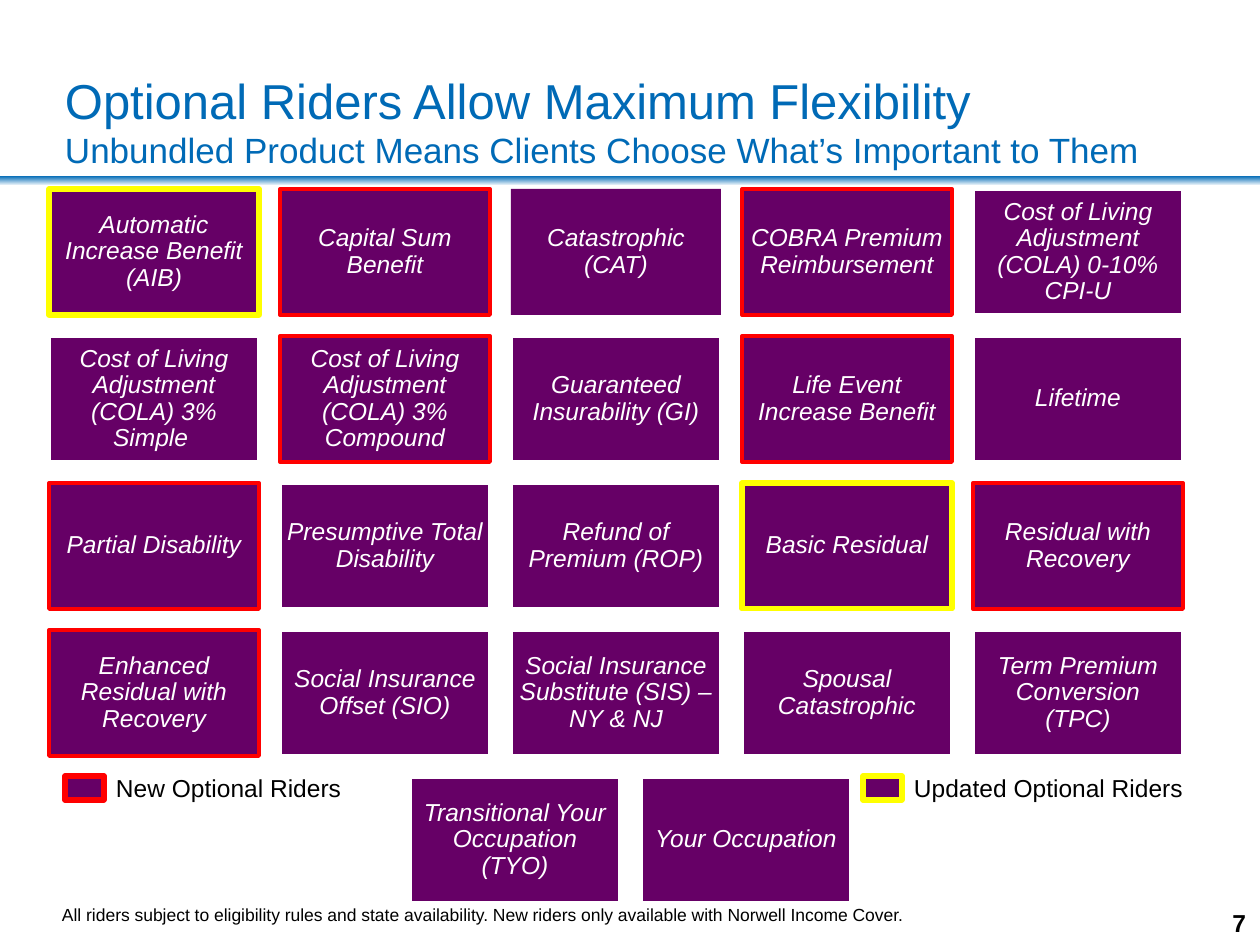
"""Build the optional riders slide: a tile grid with a two-colour legend."""
import pptx
import pptx.dml.color
import pptx.enum.shapes
import pptx.enum.text
import pptx.util

PX = 914400 // 126
BLUE, PURPLE, WHITE, BLACK = "006AB6", "660066", "FFFFFF", "000000"
RED, YELLOW = "FF0000", "FFFF00"
PLAIN, NEW, UPDATED, BARE = (WHITE, 2), (RED, 2.25), (YELLOW, 3), None

TITLE = ("Optional Riders Allow Maximum Flexibility", 28)
SUBTITLE = ("Unbundled Product Means Clients Choose What’s Important to Them", 20)
RIDER_ROWS = [
    (49, [("Automatic Increase Benefit (AIB)", UPDATED),
          ("Capital Sum Benefit", NEW),
          ("Catastrophic (CAT)", BARE),
          ("COBRA Premium Reimbursement", NEW),
          ("Cost of Living Adjustment (COLA) 0-10% CPI-U", PLAIN)]),
    (49, [("Cost of Living Adjustment (COLA) 3% Simple ", PLAIN),
          ("Cost of Living Adjustment (COLA) 3% Compound", NEW),
          ("Guaranteed Insurability (GI)", PLAIN),
          ("Life Event Increase Benefit", NEW),
          ("Lifetime", PLAIN)]),
    (49, [("Partial Disability", NEW),
          ("Presumptive Total Disability", PLAIN),
          ("Refund of Premium (ROP)", PLAIN),
          ("Basic Residual", UPDATED),
          ("Residual with Recovery", NEW)]),
    (49, [("Enhanced Residual with Recovery", NEW),
          ("Social Insurance Offset (SIO)", PLAIN),
          ("Social Insurance Substitute (SIS) – NY & NJ", PLAIN),
          ("Spousal Catastrophic", PLAIN),
          ("Term Premium Conversion (TPC)", PLAIN)]),
    (410, [("Transitional Your Occupation (TYO)", PLAIN),
           ("Your Occupation", PLAIN)]),
]
LEGEND = [(65, 346, "New Optional Riders", RED),
          (863, 325, "Updated Optional Riders", YELLOW)]
FOOTNOTE = ("All riders subject to eligibility rules and state availability. "
            "New riders only available with Norwell Income Cover.")
PAGE_NUMBER = "7"
GRID_TOP, TILE_WIDTH, TILE_HEIGHT, GAP = 189, 210, 126, 21


def color(value):
    return pptx.dml.color.RGBColor.from_string(value)


def px(*lengths):
    return [length * PX for length in lengths]


def write(box, *spans, ink=BLACK, bold=False, italic=False, align="LEFT",
          anchor="TOP", inset=(13, 6), wrap=True, spacing=None):
    """Fill a box with (text, size) spans, one line each, in one paragraph."""
    frame = box.text_frame
    frame.word_wrap = wrap
    frame.vertical_anchor = getattr(pptx.enum.text.MSO_ANCHOR, anchor)
    frame.margin_left = frame.margin_right = inset[0] * PX
    frame.margin_top = frame.margin_bottom = inset[1] * PX
    para = frame.paragraphs[0]
    para.alignment = getattr(pptx.enum.text.PP_ALIGN, align)
    if spacing:
        para.line_spacing = spacing
    for index, (text, size) in enumerate(spans):
        if index:
            para.add_line_break()
        span = para.add_run()
        span.text = text
        span.font.name = "Arial"
        span.font.size = pptx.util.Pt(size)
        span.font.bold, span.font.italic = bold, italic
        span.font.color.rgb = color(ink)


def add_text(page, place, *spans, **style):
    write(page.shapes.add_textbox(*px(*place)), *spans, **style)


def add_rectangle(page, place, fill=PURPLE, outline=None):
    kind = pptx.enum.shapes.MSO_SHAPE.RECTANGLE
    box = page.shapes.add_shape(kind, *px(*place))
    box.shadow.inherit = False
    box.fill.solid()
    box.fill.fore_color.rgb = color(fill)
    if outline:
        box.line.color.rgb = color(outline[0])
        box.line.width = pptx.util.Pt(outline[1])
    else:
        box.line.fill.background()
    return box


def add_header(page):
    band = add_rectangle(page, (0, 176, 1260, 9))
    band.fill.gradient()
    band.fill.gradient_angle = 270
    for stop, shade in zip(band.fill.gradient_stops, (BLUE, "E7F1F8")):
        stop.color.rgb = color(shade)
    add_text(page, (65, 63, 1121, 115), TITLE, SUBTITLE, ink=BLUE,
             anchor="MIDDLE", inset=(0, 0), wrap=False)


def add_riders(page):
    for row, (left, riders) in enumerate(RIDER_ROWS):
        top = GRID_TOP + row * (TILE_HEIGHT + GAP)
        for column, (name, outline) in enumerate(riders):
            place = (left + column * (TILE_WIDTH + GAP), top, TILE_WIDTH, TILE_HEIGHT)
            tile = add_rectangle(page, place, outline=outline)
            write(tile, (name, 14), ink=WHITE, italic=True, align="CENTER",
                  anchor="MIDDLE", inset=(7, 7), spacing=0.9)


def add_legend(page):
    for left, width, label, outline in LEGEND:
        add_text(page, (left + 38, 767, width, 43), (label, 14))
        add_rectangle(page, (left, 776, 39, 24), outline=(outline, 3))


def main():
    deck = pptx.Presentation()
    deck.slide_width, deck.slide_height = px(1260, 945)
    page = deck.slides.add_slide(deck.slide_layouts[6])
    add_header(page)
    add_riders(page)
    add_text(page, (953, 872, 293, 65), (PAGE_NUMBER, 14), bold=True,
             align="RIGHT", anchor="BOTTOM", inset=(0, 0), wrap=False)
    add_legend(page)
    add_text(page, (49, 898, 970, 34), (FOOTNOTE, 10))
    deck.save("out.pptx")


if __name__ == "__main__":
    main()
